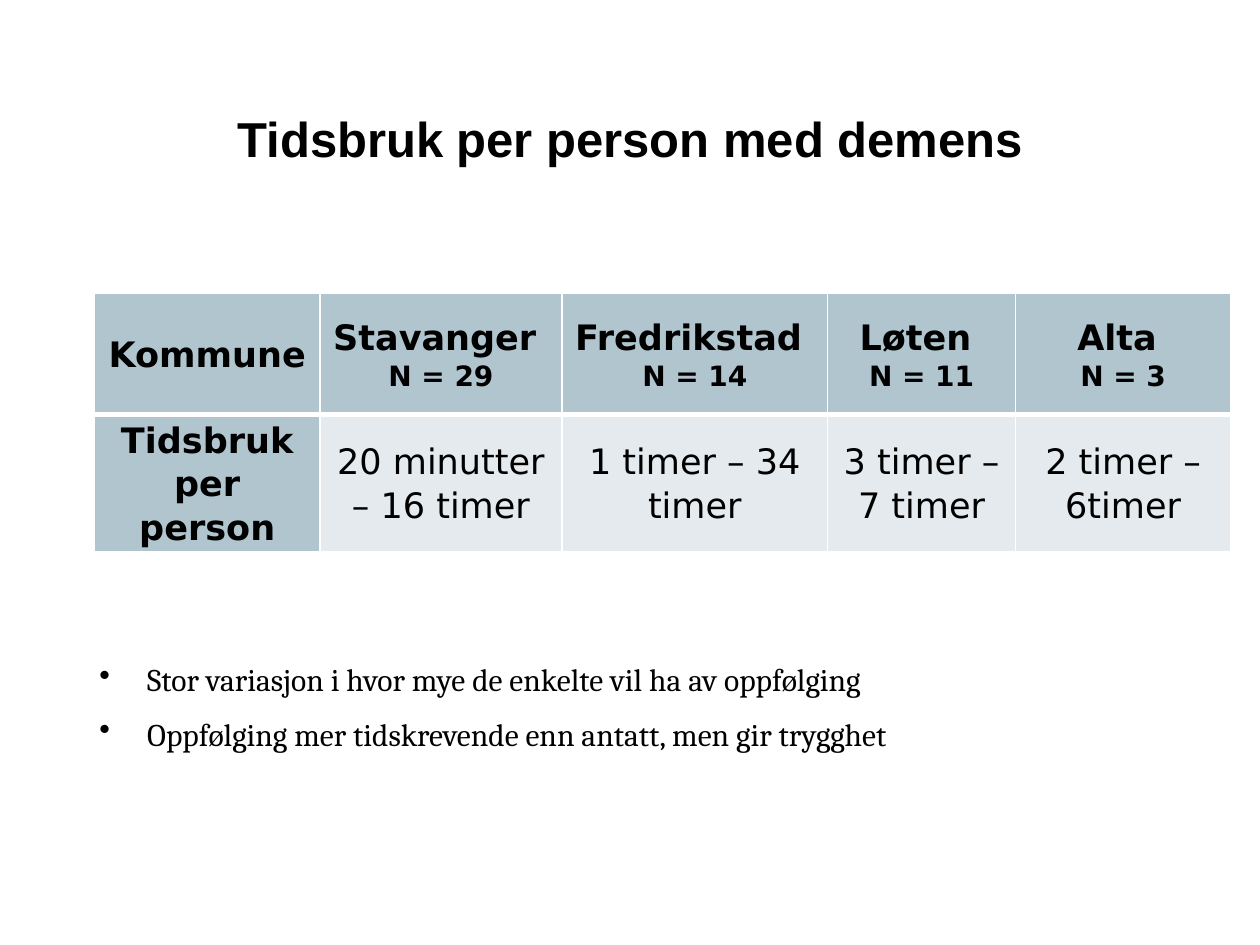
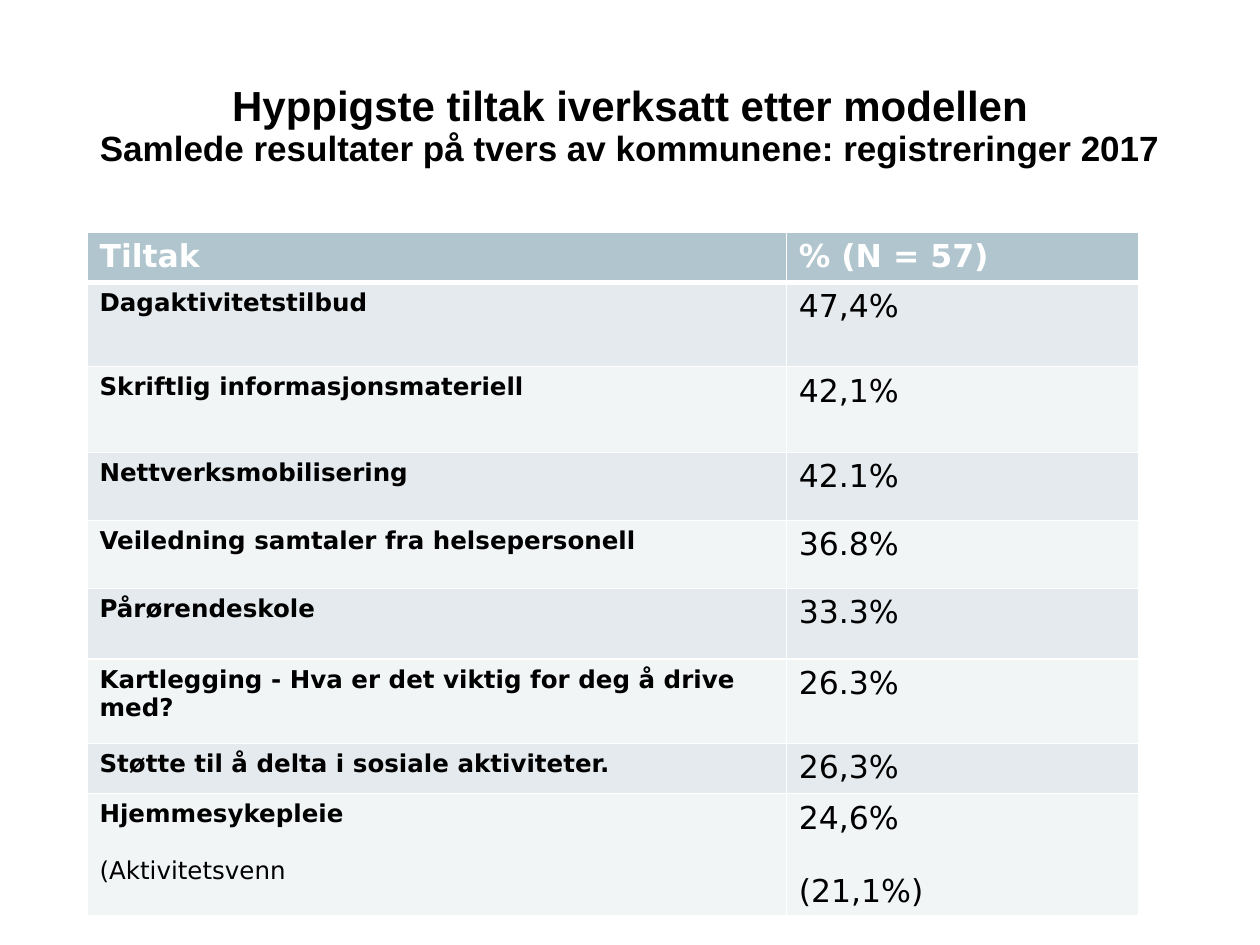
"""Build two slides on time use and the most frequent measures in dementia care."""
from lxml import etree
from pptx import Presentation
from pptx import oxml
from pptx import util as u
from pptx.dml.color import RGBColor
from pptx.enum import text as t

COLORS = {"black": "000000", "white": "FFFFFF", "header": "B0C5CE",
          "odd": "E4EAED", "even": "F2F5F6"}
TITLE_FONT, TABLE_FONT, BODY_FONT = "Arial", "DejaVu Sans", "Cambria"

TIME_TITLE = [("Tidsbruk per person med demens", 28)]
TIME_USE = [
    ("Stavanger ", "N = 29", "20 minutter – 16 timer"),
    ("Fredrikstad ", "N = 14", "1 timer – 34 timer"),
    ("Løten ", "N = 11", "3 timer – 7 timer"),
    ("Alta ", "N = 3", "2 timer – 6timer"),
]
TIME_COLUMNS = [1.79, 1.92, 2.11, 1.49, 1.71]
TIME_ROWS = [0.96, 1.09]
FINDINGS = [
    "Stor variasjon i hvor mye de enkelte vil ha av oppfølging",
    "Oppfølging mer tidskrevende enn antatt, men gir trygghet",
]

MEASURE_TITLE = [
    ("Hyppigste tiltak iverksatt etter modellen", 24),
    ("Samlede resultater på tvers av kommunene: registreringer 2017", 20),
]
MEASURE_HEADER = ("Tiltak", "% (N = 57)")
MEASURES = [
    ("Dagaktivitetstilbud", "47,4%", 0.67),
    ("Skriftlig informasjonsmateriell", "42,1%", 0.68),
    ("Nettverksmobilisering", "42.1%", 0.54),
    ("Veiledning samtaler fra helsepersonell", "36.8%", 0.54),
    ("Pårørendeskole", "33.3%", 0.56),
    ("Kartlegging - Hva er det viktig for deg å drive med?", "26.3%", 0.67),
    ("Støtte til å delta i sosiale aktiviteter.", "26,3%", 0.4),
    ("Hjemmesykepleie", "24,6%", 0.96),
]
ADDED_MEASURE = ("(Aktivitetsvenn", "(21,1%)")
MEASURE_COLUMNS = [5.55, 2.8]
HEADER_HEIGHT = 0.4


def write(frame, text, size, font, color="black", bold=False, align=None,
          spacing=1.0, before=0, after=0, bullet=None):
    """Add one formatted paragraph, using the empty first one if it is free."""
    paragraph = frame.paragraphs[0]
    if paragraph.runs:
        paragraph = frame.add_paragraph()
    if bullet:
        properties = paragraph._p.get_or_add_pPr()
        indent = u.Inches(0.38)
        properties.set("marL", str(indent))
        properties.set("indent", str(-indent))
        etree.SubElement(properties, oxml.ns.qn("a:buChar")).set("char", bullet)
    paragraph.alignment = align
    paragraph.line_spacing = spacing
    paragraph.space_before = u.Pt(before)
    paragraph.space_after = u.Pt(after)
    run = paragraph.add_run()
    run.text = text
    run.font.size = u.Pt(size)
    run.font.name = font
    run.font.bold = bold
    run.font.color.rgb = RGBColor.from_string(COLORS[color])


def add_titled_slide(presentation, lines, height):
    slide = presentation.slides.add_slide(presentation.slide_layouts[5])
    title = slide.shapes.title
    title.left, title.top = u.Inches(0.69), u.Inches(0.4)
    title.width, title.height = u.Inches(8.62), u.Inches(height)
    frame = title.text_frame
    frame.word_wrap = True
    frame.auto_size = t.MSO_AUTO_SIZE.NONE
    frame.vertical_anchor = t.MSO_ANCHOR.MIDDLE
    frame.margin_left = frame.margin_right = u.Inches(0.05)
    for text, size in lines:
        write(frame, text, size, TITLE_FONT, bold=True,
              align=t.PP_ALIGN.CENTER, spacing=0.9)
    return slide


def add_grid(slide, left, top, columns, rows):
    shape = slide.shapes.add_table(
        len(rows), len(columns), u.Inches(left), u.Inches(top),
        u.Inches(sum(columns)), u.Inches(sum(rows)))
    table = shape.table
    table.first_row = table.horz_banding = False
    for column, width in zip(table.columns, columns):
        column.width = u.Inches(width)
    for row, height in zip(table.rows, rows):
        row.height = u.Inches(height)
    return table


def style_cell(table, row, column, fill):
    """Give a cell its white borders and fill, with a thick rule under the header."""
    cell = table.cell(row, column)
    properties = cell._tc.get_or_add_tcPr()
    thick = {(0, "B"), (1, "T")}
    for side in "LRTB":
        width = u.Pt(3 if (row, side) in thick else 1)
        line = etree.SubElement(properties, oxml.ns.qn(f"a:ln{side}"), w=str(width))
        solid = etree.SubElement(line, oxml.ns.qn("a:solidFill"))
        etree.SubElement(solid, oxml.ns.qn("a:srgbClr"), val=COLORS["white"])
    cell.fill.solid()
    cell.fill.fore_color.rgb = RGBColor.from_string(COLORS[fill])
    return cell


def build_time_slide(presentation):
    slide = add_titled_slide(presentation, TIME_TITLE, 1.45)
    table = add_grid(slide, 0.75, 2.33, TIME_COLUMNS, TIME_ROWS)
    header = [[("Kommune", 20)]] + [[(place, 20), (count, 16)]
                                    for place, count, _ in TIME_USE]
    body = [[("Tidsbruk per person", 20)]] + [[(time, 20)] for *_, time in TIME_USE]
    for row, cells in enumerate([header, body]):
        for column, lines in enumerate(cells):
            heading = row == 0 or column == 0
            cell = style_cell(table, row, column, "header" if heading else "odd")
            cell.vertical_anchor = t.MSO_ANCHOR.MIDDLE
            cell.margin_left = cell.margin_right = u.Inches(0.07)
            cell.margin_top = cell.margin_bottom = 0
            for text, size in lines:
                write(cell.text_frame, text, size, TABLE_FONT, bold=heading,
                      align=t.PP_ALIGN.CENTER, spacing=1.07)

    findings = slide.shapes.add_textbox(
        u.Inches(0.69), u.Inches(5.17), u.Inches(9.08), u.Inches(0.84))
    findings.text_frame.word_wrap = True
    for finding in FINDINGS:
        write(findings.text_frame, finding, 18, BODY_FONT,
              spacing=1.07, after=8, bullet="•")


def build_measure_slide(presentation):
    slide = add_titled_slide(presentation, MEASURE_TITLE, 1.22)
    heights = [HEADER_HEIGHT] + [height for *_, height in MEASURES]
    table = add_grid(slide, 0.69, 1.84, MEASURE_COLUMNS, heights)
    for column, heading in enumerate(MEASURE_HEADER):
        cell = style_cell(table, 0, column, "header")
        write(cell.text_frame, heading, 18, TABLE_FONT, color="white", bold=True)
    sizes = (14, 18)
    for row, (measure, share, _) in enumerate(MEASURES, start=1):
        for column, text in enumerate((measure, share)):
            cell = style_cell(table, row, column, "odd" if row % 2 else "even")
            write(cell.text_frame, text, sizes[column], TABLE_FONT, bold=column == 0)
    for column, text in enumerate(ADDED_MEASURE):
        size = sizes[column]
        write(table.cell(len(MEASURES), column).text_frame, text, size,
              TABLE_FONT, before=round(size * 1.16, 1))


def main():
    presentation = Presentation()
    presentation.slide_width = u.Inches(10)
    presentation.slide_height = u.Inches(7.5)
    build_time_slide(presentation)
    build_measure_slide(presentation)
    presentation.save("out.pptx")


if __name__ == "__main__":
    main()
